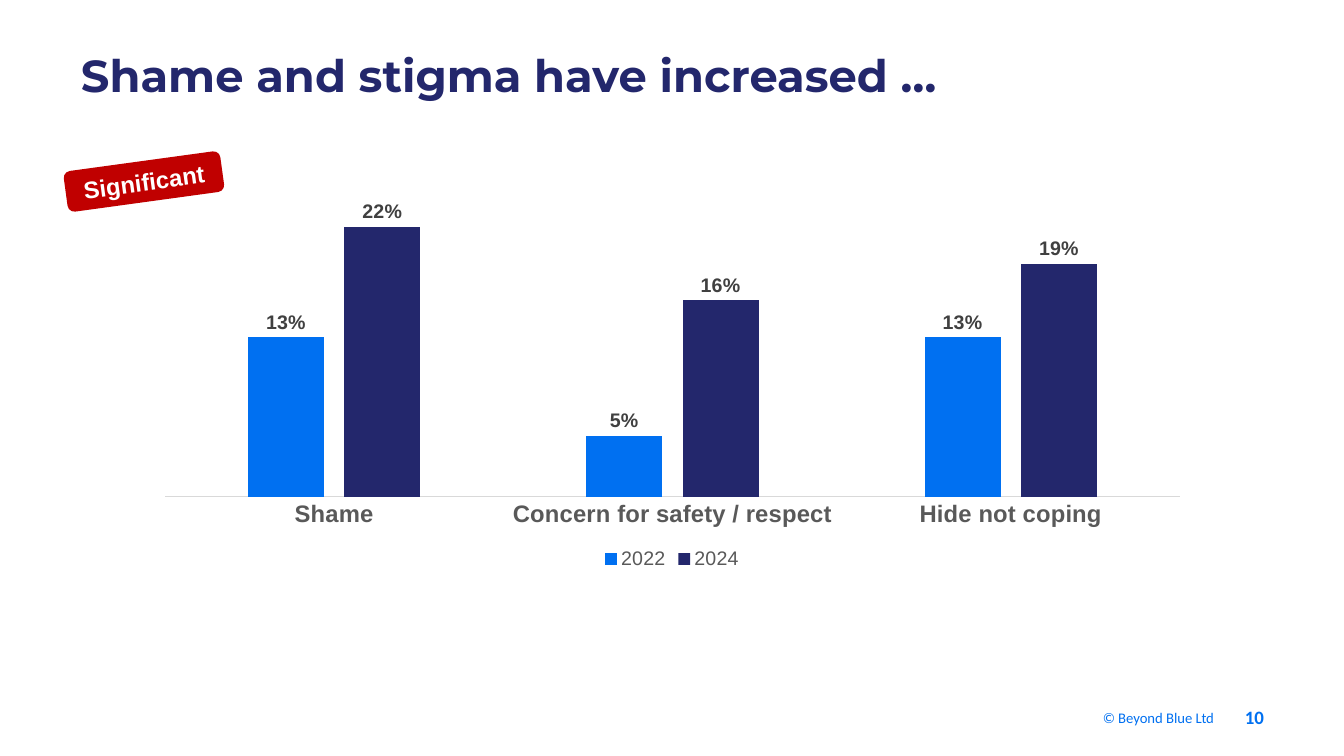
from lxml import etree
from pptx import Presentation
from pptx.chart.data import CategoryChartData
from pptx.dml.color import RGBColor
from pptx.enum.chart import XL_CHART_TYPE, XL_LABEL_POSITION, XL_LEGEND_POSITION, XL_TICK_MARK
from pptx.enum.shapes import MSO_SHAPE
from pptx.enum.text import MSO_ANCHOR, PP_ALIGN
from pptx.oxml.ns import qn
from pptx.util import Pt

COLUMN = XL_CHART_TYPE.COLUMN_CLUSTERED
OUTSIDE, BOTTOM = XL_LABEL_POSITION.OUTSIDE_END, XL_LEGEND_POSITION.BOTTOM
NO_TICK = XL_TICK_MARK.NONE
ROUNDED = MSO_SHAPE.ROUNDED_RECTANGLE
TOP, MIDDLE = MSO_ANCHOR.TOP, MSO_ANCHOR.MIDDLE
LEFT, CENTER, RIGHT = PP_ALIGN.LEFT, PP_ALIGN.CENTER, PP_ALIGN.RIGHT

# Content
COLORS = {"blue": "0070F1", "navy": "23276C", "red": "C00000", "white": "FFFFFF",
          "label": "404040", "axis": "595959", "rule": "D9D9D9"}
TEXTS = [  # text, box in px, anchor, alignment, font
    ("© Beyond Blue Ltd", (644, 709, 570, 18), MIDDLE, RIGHT,
     dict(name="Calibri", size=10.5, color="blue")),
    ("10", (1215, 708, 49, 18), MIDDLE, RIGHT,
     dict(name="Calibri", size=13.5, color="blue", bold=True)),
    ("Shame and stigma have increased …", (81, 48, 1246, 212), TOP, LEFT,
     dict(name="Montserrat", size=32, color="navy", bold=True)),
]
CATEGORIES = ["Shame", "Concern for safety / respect", "Hide not coping"]
SERIES = [("2022", "blue", (0.13, 0.05, 0.13)),
          ("2024", "navy", (0.22, 0.16, 0.19))]
CHART_BOX = (144, 182, 1056, 392)
PLOT_BOX = (165, 190, 1015, 307)
TAG, TAG_BOX, TAG_ANGLE = "Significant", (65, 161, 158, 41), -7.8
LABEL_FONT = dict(name="Arial", size=14, color="label", bold=True)
AXIS_FONT = dict(name="Arial", size=17, color="axis", bold=True)
LEGEND_FONT = dict(name="Arial", size=14, color="axis", bold=False)
TAG_FONT = dict(name="Arial", size=17, color="white", bold=True)

PX = 914400 / 100.8


def emu(*lengths):
    return [round(n * PX) for n in lengths]


def rgb(name):
    return RGBColor.from_string(COLORS[name])


def set_font(font, fmt):
    for key, value in fmt.items():
        if key == "color":
            font.color.rgb = rgb(value)
        else:
            setattr(font, key, Pt(value) if key == "size" else value)


def write(sp, text, anchor, align, fmt):
    tf = sp.text_frame
    tf.word_wrap = True
    tf.vertical_anchor = anchor
    for side in ("left", "top", "right", "bottom"):
        setattr(tf, f"margin_{side}", 0)
    p = tf.paragraphs[0]
    p.alignment = align
    r = p.add_run()
    r.text = text
    set_font(r.font, fmt)


prs = Presentation()
prs.slide_width, prs.slide_height = emu(1344, 756)
s = prs.slides.add_slide(prs.slide_layouts[6])

# Title and footer
for text, box, anchor, align, fmt in TEXTS:
    write(s.shapes.add_textbox(*emu(*box)), text, anchor, align, fmt)

# Column chart
data = CategoryChartData(number_format="0%")
data.categories = CATEGORIES
for name, _, values in SERIES:
    data.add_series(name, values)
chart = s.shapes.add_chart(COLUMN, *emu(*CHART_BOX), data).chart
set_font(chart.font, dict(name="Calibri", size=10))
chart.has_title = False
chart.has_legend = True
chart.legend.position = BOTTOM
chart.legend.include_in_layout = False
set_font(chart.legend.font, LEGEND_FONT)

plot = chart.plots[0]
plot.gap_width, plot.overlap, plot.vary_by_categories = 219, -27, False
for series, (_, color, _) in zip(plot.series, SERIES):
    series.format.fill.solid()
    series.format.fill.fore_color.rgb = rgb(color)
    labels = series.data_labels
    labels.show_value = True
    labels.position = OUTSIDE
    labels.number_format, labels.number_format_is_linked = "0%", False
    set_font(labels.font, LABEL_FONT)

# Axes
cat_axis, val_axis = chart.category_axis, chart.value_axis
cat_axis.major_tick_mark = cat_axis.minor_tick_mark = NO_TICK
cat_axis.format.line.color.rgb = rgb("rule")
cat_axis.format.line.width = Pt(0.75)
set_font(cat_axis.tick_labels.font, AXIS_FONT)
val_axis.minimum_scale, val_axis.maximum_scale = 0, 0.25
val_axis.has_major_gridlines = False
val_axis.visible = False

# Plot area as fractions of the chart
area = chart._chartSpace.chart.plotArea
for old in area.findall(qn("c:layout")):
    area.remove(old)
layout = etree.Element(qn("c:layout"))
manual = etree.SubElement(layout, qn("c:manualLayout"))
cx, cy, cw, ch = CHART_BOX
px, py, pw, ph = PLOT_BOX
for tag, value in [("layoutTarget", "inner"), ("xMode", "edge"), ("yMode", "edge"),
                   ("x", (px - cx) / cw), ("y", (py - cy) / ch),
                   ("w", pw / cw), ("h", ph / ch)]:
    etree.SubElement(manual, qn(f"c:{tag}")).set("val", str(value))
area.insert(0, layout)

# Tilted tag
sp = s.shapes.add_shape(ROUNDED, *emu(*TAG_BOX))
sp.rotation = TAG_ANGLE
sp.shadow.inherit = False
sp.fill.solid()
sp.fill.fore_color.rgb = rgb("red")
sp.line.fill.background()
write(sp, TAG, MIDDLE, CENTER, TAG_FONT)

prs.save("out.pptx")
